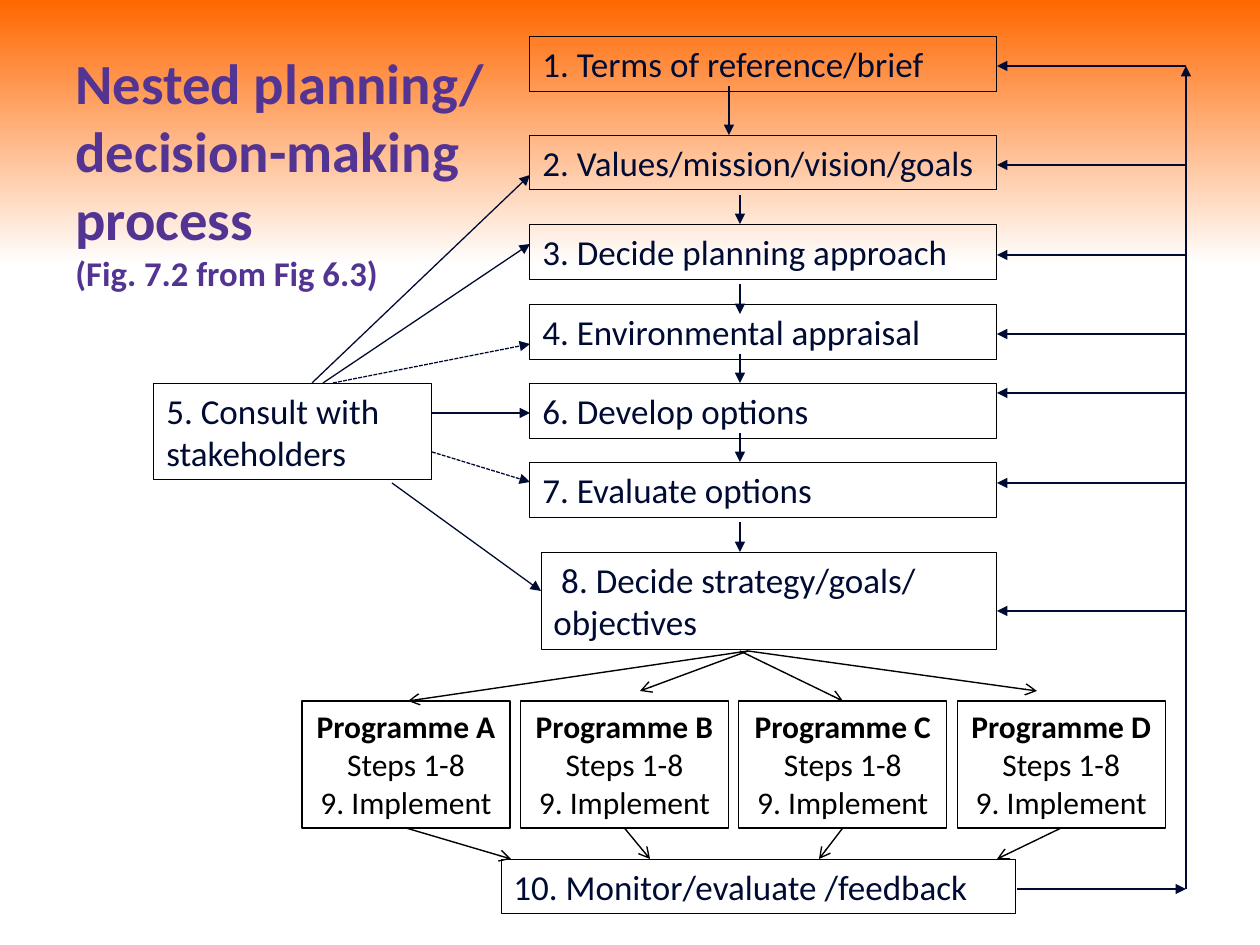
"""Build the nested planning and decision-making process slide."""
from lxml.etree import SubElement
from pptx import Presentation
from pptx.dml.color import RGBColor
from pptx.enum.dml import MSO_LINE
from pptx.enum.shapes import MSO_CONNECTOR, MSO_SHAPE
from pptx.enum.text import MSO_ANCHOR, MSO_AUTO_SIZE, PP_ALIGN
from pptx.oxml.ns import qn
from pptx.util import Pt

EMU_PER_PX = 914400 / 126
NAVY, BLACK, PURPLE = "000B34", "000000", "533492"
STEP_X, STEP_W, STEP_H, STEP_RIGHT = 530, 467, 55, 997
STEPS = [
    (36, "1. Terms of reference/brief"),
    (135, "2. Values/mission/vision/goals"),
    (224, "3. Decide planning approach"),
    (304, "4. Environmental appraisal"),
    (383, "6. Develop options"),
    (462, "7. Evaluate options"),
]
OTHER_STEPS = [
    (154, 383, 278, 97, "5. Consult with stakeholders"),
    (541, 552, 456, 97, " 8. Decide strategy/goals/ objectives"),
    (501, 859, 515, STEP_H, "10. Monitor/evaluate /feedback"),
]
STEP_ARROWS = [(729, 86, 135), (740, 195, 224), (740, 284, 314),
               (740, 354, 383), (740, 433, 462), (740, 522, 552)]
CONSULT_ARROWS = [
    (312, 383, 530, 175, False),
    (323, 383, 530, 244, False),
    (333, 383, 530, 344, True),
    (432, 413, 530, 413, False),
    (432, 452, 530, 482, True),
    (392, 483, 541, 591, False),
]
FEEDBACK_X, FEEDBACK_BOTTOM = 1186, 889
FEEDBACK_YS = [66, 165, 255, 334, 393, 483, 611]
PROGRAMME_X, PROGRAMME_PITCH, PROGRAMME_W = 302, 218.4, 208
PROGRAMME_TOP, PROGRAMME_H = 701, 127
STRATEGY_ARROWS = [(748, 408, 701), (748, 640, 691),
                   (740, 843, 701), (748, 1037, 691)]
MONITOR_XS = [511, 650, 819, 997]


def px(n):
    """Turn pixels into EMU."""
    return round(n * EMU_PER_PX)


def rgb(value):
    """Turn a hex string into a colour."""
    return RGBColor.from_string(value)


def add_run(p, text, size, color, bold=False):
    """Add one formatted run to a paragraph."""
    r = p.add_run()
    r.text = text
    r.font.name = "Calibri"
    r.font.size = Pt(size)
    r.font.bold = bold
    r.font.color.rgb = rgb(color)


def add_box(s, x, y, w, h, line_width):
    """Add an unfilled outlined box and return its text frame."""
    sp = s.shapes.add_shape(MSO_SHAPE.RECTANGLE, px(x), px(y), px(w), px(h))
    sp.shadow.inherit = False
    sp.fill.background()
    sp.line.color.rgb = rgb(BLACK)
    sp.line.width = Pt(line_width)
    tf = sp.text_frame
    tf.word_wrap = True
    tf.auto_size = MSO_AUTO_SIZE.SHAPE_TO_FIT_TEXT
    tf.vertical_anchor = MSO_ANCHOR.TOP
    return tf


def add_step(s, x, y, w, h, text):
    """Add a numbered step box."""
    p = add_box(s, x, y, w, h, 0.5).paragraphs[0]
    p.alignment = PP_ALIGN.LEFT
    add_run(p, text, 20, NAVY)


def add_programme(s, x, letter):
    """Add a programme box with its steps."""
    tf = add_box(s, x, PROGRAMME_TOP, PROGRAMME_W, PROGRAMME_H, 0.75)
    p = tf.paragraphs[0]
    p.alignment = PP_ALIGN.CENTER
    add_run(p, f"Programme {letter} ", 18, BLACK, True)
    add_run(p, "Steps 1-8", 18, BLACK)
    p = tf.add_paragraph()
    p.alignment = PP_ALIGN.CENTER
    add_run(p, "9. Implement", 18, BLACK)


def add_arrow(s, x1, y1, x2, y2, color=NAVY, width=0.75, head="triangle", dashed=False):
    """Add a straight arrow pointing at its second end."""
    cxn = s.shapes.add_connector(MSO_CONNECTOR.STRAIGHT, px(x1), px(y1), px(x2), px(y2))
    cxn.line.color.rgb = rgb(color)
    cxn.line.width = Pt(width)
    if dashed:
        cxn.line.dash_style = MSO_LINE.SQUARE_DOT
    SubElement(cxn.line._get_or_add_ln(), qn("a:tailEnd"), type=head)
    SubElement(cxn._element.spPr, qn("a:effectLst"))


def add_open_arrow(s, x1, y1, x2, y2):
    """Add a black arrow with an open head."""
    add_arrow(s, x1, y1, x2, y2, BLACK, 0.79, "arrow")


def add_title(s):
    """Add the title with its figure reference."""
    tf = s.shapes.add_textbox(px(63), px(38), px(449), px(266)).text_frame
    tf.word_wrap = True
    tf.vertical_anchor = MSO_ANCHOR.MIDDLE
    p = tf.paragraphs[0]
    add_run(p, "Nested planning/ decision-making process", 32.4, PURPLE, True)
    p.add_line_break()
    add_run(p, "(Fig. 7.2 from Fig 6.3)", 19.8, PURPLE, True)


def set_background(s):
    """Fade the background from orange down to white."""
    fill = s.background.fill
    fill.gradient()
    fill.gradient_angle = 270
    for stop, position, color in zip(fill.gradient_stops, (0, 0.28), ("FF6700", "FFFFFF")):
        stop.position = position
        stop.color.rgb = rgb(color)


def main():
    """Build and save the slide."""
    prs = Presentation()
    prs.slide_width, prs.slide_height = px(1260), px(945)
    s = prs.slides.add_slide(prs.slide_layouts[6])
    set_background(s)
    add_title(s)

    for y, text in STEPS:
        add_step(s, STEP_X, y, STEP_W, STEP_H, text)
    for step in OTHER_STEPS:
        add_step(s, *step)
    for x, y1, y2 in STEP_ARROWS:
        add_arrow(s, x, y1, x, y2)
    for *ends, dashed in CONSULT_ARROWS:
        add_arrow(s, *ends, dashed=dashed)

    add_arrow(s, 1017, FEEDBACK_BOTTOM, FEEDBACK_X, FEEDBACK_BOTTOM)
    add_arrow(s, FEEDBACK_X, FEEDBACK_BOTTOM, FEEDBACK_X, FEEDBACK_YS[0])
    for y in FEEDBACK_YS:
        add_arrow(s, FEEDBACK_X, y, STEP_RIGHT, y)

    for i, letter in enumerate("ABCD"):
        x = PROGRAMME_X + i * PROGRAMME_PITCH
        add_programme(s, x, letter)
        add_open_arrow(s, x + PROGRAMME_W / 2, PROGRAMME_TOP + PROGRAMME_H, MONITOR_XS[i], 859)
    for x1, x2, y2 in STRATEGY_ARROWS:
        add_open_arrow(s, x1, 651, x2, y2)

    prs.save("out.pptx")


if __name__ == "__main__":
    main()
